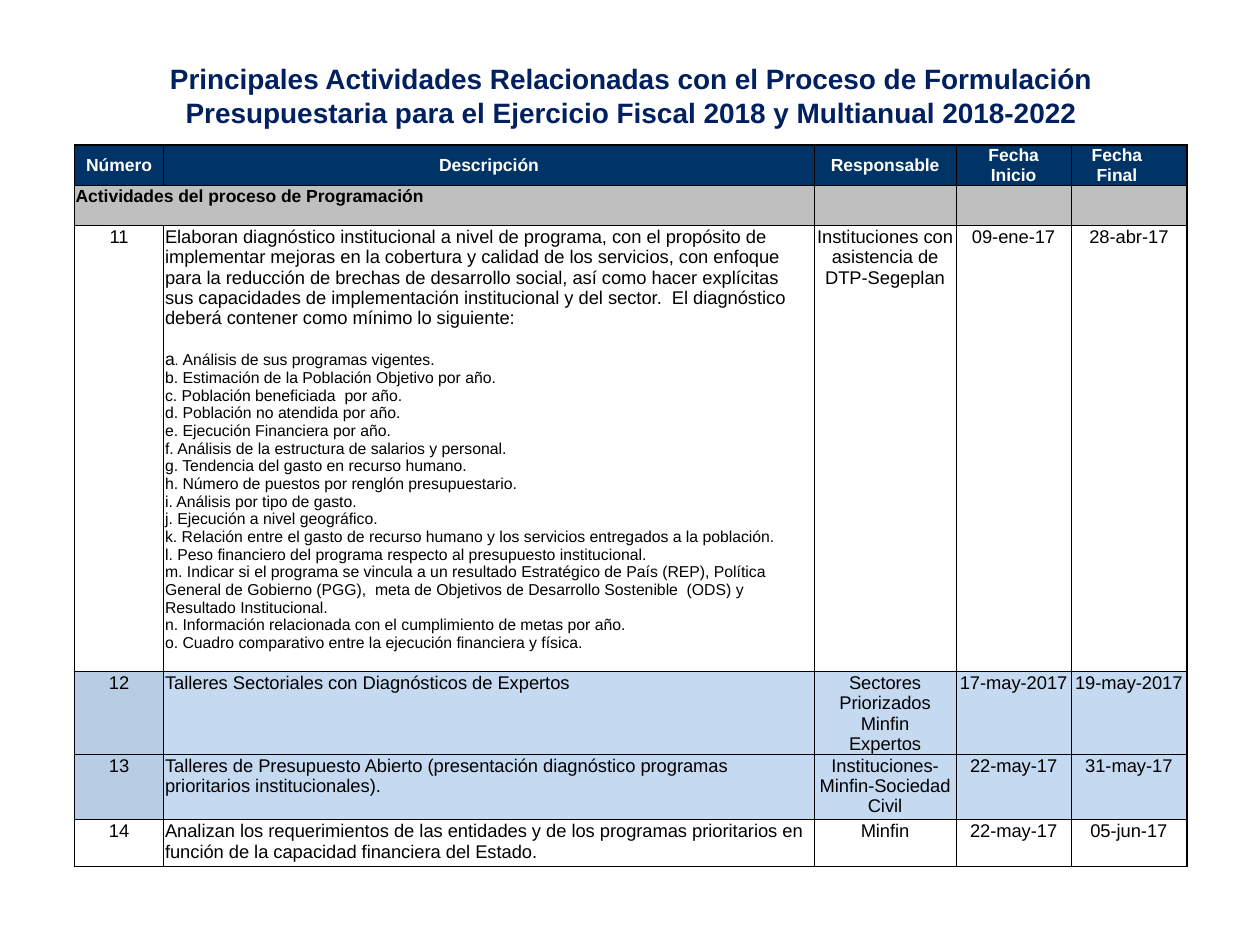
from lxml import etree
from pptx import Presentation
from pptx.dml.color import RGBColor
from pptx.enum.text import MSO_ANCHOR, PP_ALIGN
from pptx.oxml.ns import qn
from pptx.util import Inches, Pt

CENTER, LEFT = PP_ALIGN.CENTER, PP_ALIGN.LEFT
TOP, MIDDLE = MSO_ANCHOR.TOP, MSO_ANCHOR.MIDDLE
FONT = "Arial"
BLACK, WHITE, NAVY, GRAY = "000000", "FFFFFF", "003366", "BFBFBF"
BLUE, PALE = "B8CCE4", "C5D9F1"
COLS = [0.71, 5.16, 1.13, 0.91, 0.92]
ROWS = [0.32, 0.32, 3.54, 0.65, 0.52, 0.37]
HEADS = ["Número", "Descripción", "Responsable", "Fecha\nInicio"]
INTRO = (
    "Elaboran diagnóstico institucional a nivel de programa, con el propósito de "
    "implementar mejoras en la cobertura y calidad de los servicios, con enfoque "
    "para la reducción de brechas de desarrollo social, así como hacer explícitas "
    "sus capacidades de implementación institucional y del sector.  El diagnóstico "
    "deberá contener como mínimo lo siguiente:"
)
POINTS = [
    "Análisis de sus programas vigentes.",
    "b. Estimación de la Población Objetivo por año.",
    "c. Población beneficiada  por año.",
    "d. Población no atendida por año.",
    "e. Ejecución Financiera por año.",
    "f. Análisis de la estructura de salarios y personal.",
    "g. Tendencia del gasto en recurso humano.",
    "h. Número de puestos por renglón presupuestario.",
    "i. Análisis por tipo de gasto.",
    "j. Ejecución a nivel geográfico.",
    "k. Relación entre el gasto de recurso humano y los servicios entregados "
    "a la población.",
    "l. Peso financiero del programa respecto al presupuesto institucional.",
    "m. Indicar si el programa se vincula a un resultado Estratégico de País (REP), "
    "Política General de Gobierno (PGG),  meta de Objetivos de Desarrollo "
    "Sostenible  (ODS) y Resultado Institucional.",
    "n. Información relacionada con el cumplimiento de metas por año.",
    "o. Cuadro comparativo entre la ejecución financiera y física.",
]
TASKS = [
    ("11", INTRO, "Instituciones con asistencia de DTP-Segeplan",
     "09-ene-17", "28-abr-17"),
    ("12", "Talleres Sectoriales con Diagnósticos de Expertos",
     "Sectores Priorizados\nMinfin\nExpertos", "17-may-2017", "19-may-2017"),
    ("13", "Talleres de Presupuesto Abierto (presentación diagnóstico programas "
     "prioritarios institucionales).", "Instituciones-Minfin-Sociedad Civil",
     "22-may-17", "31-may-17"),
    ("14", "Analizan los requerimientos de las entidades y de los programas "
     "prioritarios en función de la capacidad financiera del Estado.",
     "Minfin", "22-may-17", "05-jun-17"),
]
FILLS = [(WHITE, WHITE), (BLUE, PALE), (BLUE, PALE), (WHITE, WHITE)]
TITLE = (
    "Principales Actividades Relacionadas con el Proceso de Formulación "
    "Presupuestaria para el Ejercicio Fiscal 2018 y Multianual 2018-2022"
)


def paint(target, color):
    """Set a solid colour on a fill."""
    target.solid()
    target.fore_color.rgb = RGBColor.from_string(color)


def write(par, text, size, color=BLACK, bold=False, align=LEFT):
    """Add text to a paragraph, one run for each line."""
    par.alignment = align
    for i, line in enumerate(text.split("\n")):
        if i:
            par.add_line_break()
        run = par.add_run()
        run.text = line
        run.font.name, run.font.size, run.font.bold = FONT, Pt(size), bold
        paint(run.font.fill, color)


def border(cell, side, width):
    """Draw one black edge of a cell."""
    props = cell._tc.get_or_add_tcPr()
    line = etree.SubElement(props, qn("a:ln" + side), w=str(Pt(width)))
    fill = etree.SubElement(line, qn("a:solidFill"))
    etree.SubElement(fill, qn("a:srgbClr"), val=BLACK)


def style(cell, row, col, fill):
    """Set margins, edges and fill of a cell."""
    cell.margin_left = cell.margin_right = cell.margin_top = Inches(0.01)
    cell.margin_bottom = 0
    cell.vertical_anchor = TOP if row else MIDDLE
    outer = {"L": col == 0, "R": col == len(COLS) - 1, "T": row == 0, "B": False}
    for side, thick in outer.items():
        border(cell, side, 1 if thick else 0.5)
    paint(cell.fill, fill)


def add_grid(slide):
    """Add the empty styled table and return it."""
    table = slide.shapes.add_table(
        len(ROWS), len(COLS), Inches(0.59), Inches(1.15),
        Inches(sum(COLS)), Inches(sum(ROWS))).table
    table.first_row = table.horz_banding = False
    for col, width in zip(table.columns, COLS):
        col.width = Inches(width)
    fills = [(NAVY, NAVY), (GRAY, GRAY)] + FILLS
    for r, height in enumerate(ROWS):
        table.rows[r].height = Inches(height)
        for c in range(len(COLS)):
            style(table.cell(r, c), r, c, fills[r][c > 0])
    return table


def fill_head(table):
    """Write the header row and the section row."""
    for c, text in enumerate(HEADS):
        par = table.cell(0, c).text_frame.paragraphs[0]
        write(par, text, 10, WHITE, True, CENTER)
    frame = table.cell(0, len(HEADS)).text_frame
    first = frame.paragraphs[0]
    write(first, "Fecha", 10, WHITE, True, CENTER)
    first._p.get_or_add_pPr().set("marR", str(Inches(0.19)))
    write(frame.add_paragraph(), "Final", 10, WHITE, True, CENTER)
    part = table.cell(1, 0)
    part.merge(table.cell(1, 1))
    write(part.text_frame.paragraphs[0],
          "Actividades del proceso de Programación", 10, bold=True)


def fill_tasks(table):
    """Write the activity rows and the list of the first one."""
    for r, task in enumerate(TASKS, 2):
        for c, text in enumerate(task):
            par = table.cell(r, c).text_frame.paragraphs[0]
            write(par, text, 10.5, align=LEFT if c == 1 else CENTER)
    par = table.cell(2, 1).text_frame.add_paragraph()
    par.space_before = Pt(12)
    for text, size in (("a", 10), (". ", 8), ("\n".join(POINTS), 9)):
        write(par, text, size)


def add_title(slide):
    """Add the centred title."""
    box = slide.shapes.add_textbox(Inches(0.51), Inches(0.13), Inches(9), Inches(1.25))
    frame = box.text_frame
    frame.word_wrap = True
    frame.vertical_anchor = MIDDLE
    write(frame.paragraphs[0], TITLE, 16, "002060", True, CENTER)


def main():
    """Build and save the slide."""
    deck = Presentation()
    deck.slide_width, deck.slide_height = Inches(10), Inches(7.5)
    slide = deck.slides.add_slide(deck.slide_layouts[6])
    table = add_grid(slide)
    fill_head(table)
    fill_tasks(table)
    add_title(slide)
    deck.save("out.pptx")


if __name__ == "__main__":
    main()
